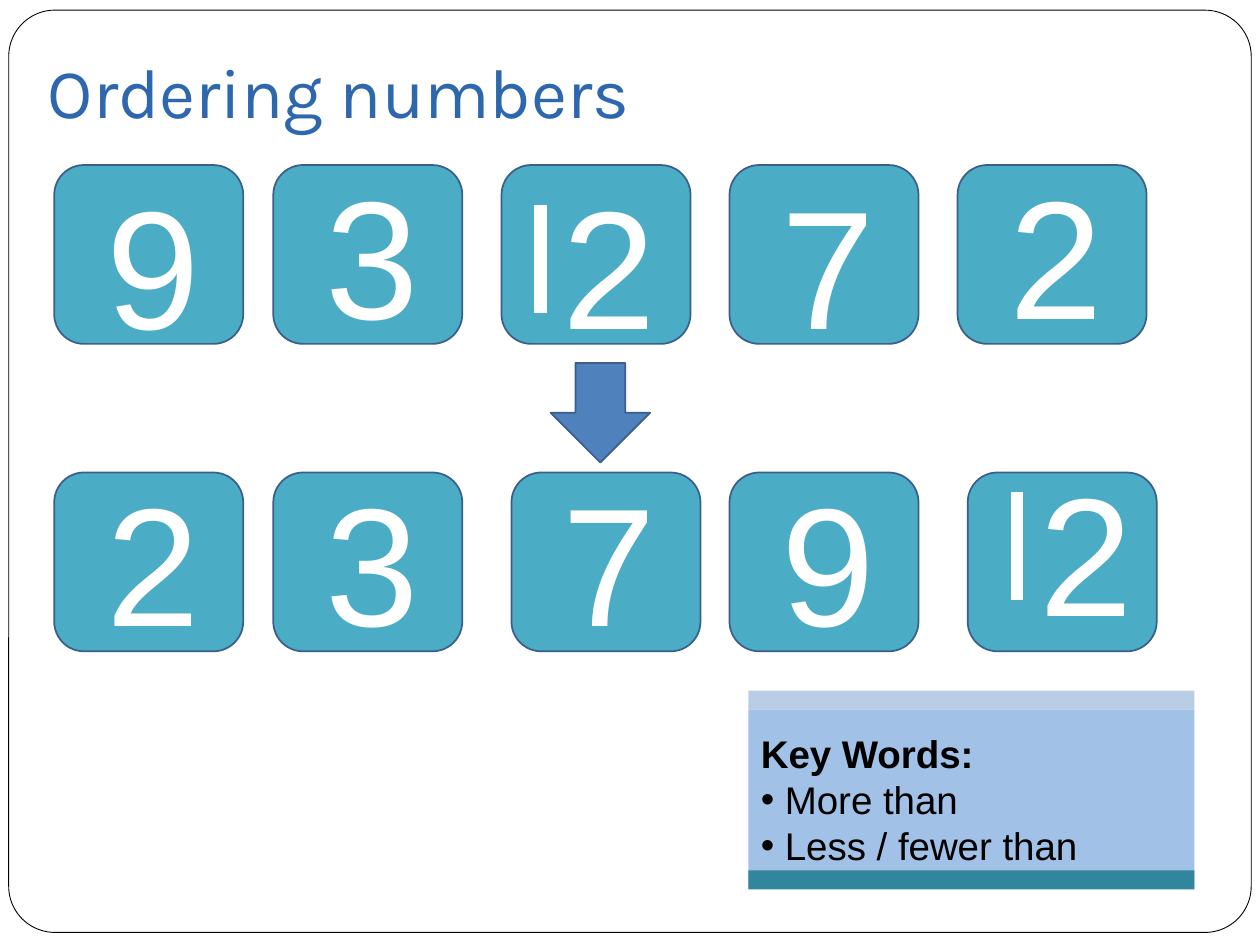
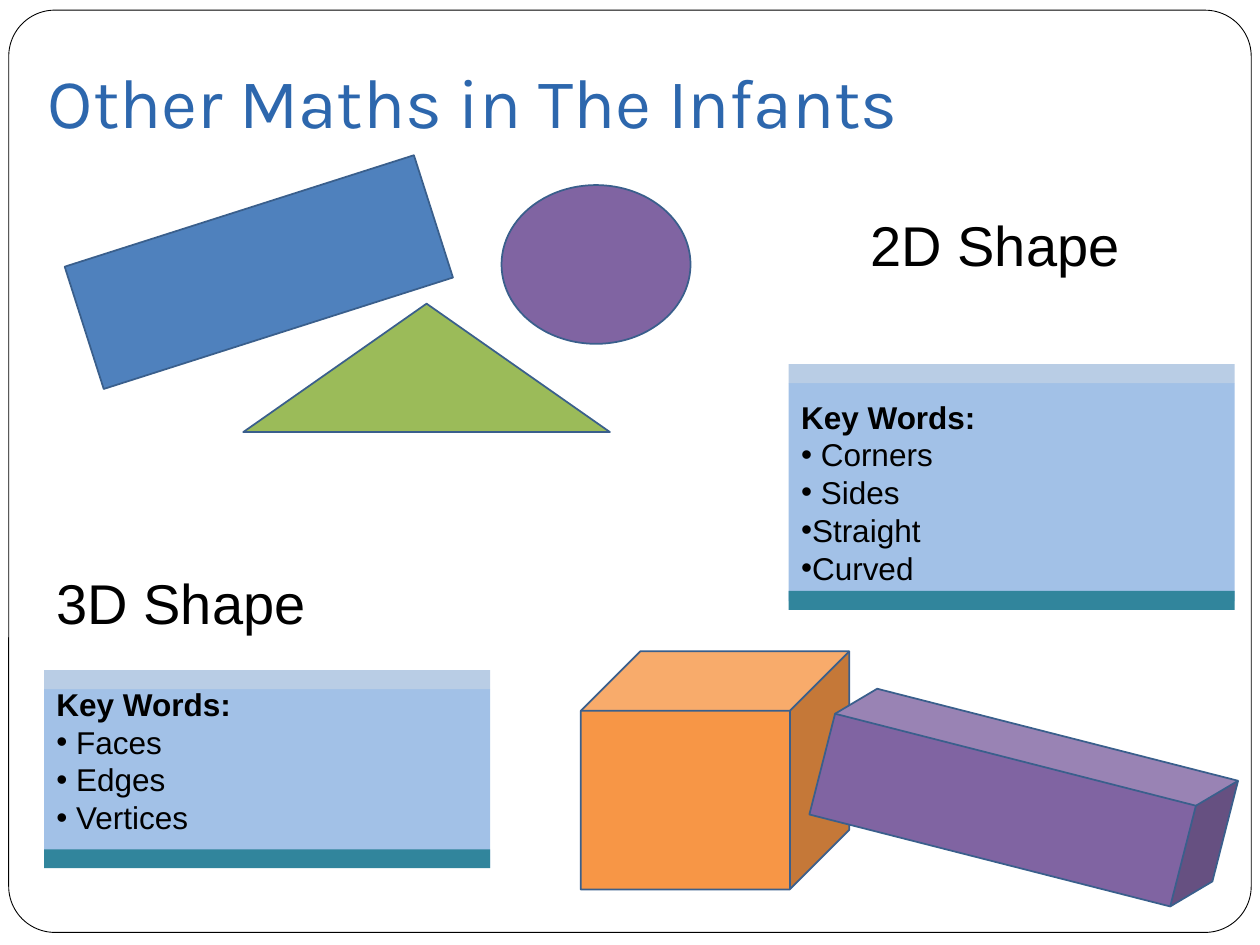
"""Build two infant maths slides: ordering numbers, and 2D and 3D shapes."""
from lxml import etree
from pptx import Presentation
from pptx.dml.color import RGBColor
from pptx.enum.shapes import MSO_CONNECTOR, MSO_SHAPE
from pptx.enum.text import MSO_ANCHOR, MSO_AUTO_SIZE, PP_ALIGN
from pptx.oxml.ns import qn
from pptx.util import Pt

ROUND, RECT, ARROW = MSO_SHAPE.ROUNDED_RECTANGLE, MSO_SHAPE.RECTANGLE, MSO_SHAPE.DOWN_ARROW
TRIANGLE, OVAL, CUBE = MSO_SHAPE.ISOSCELES_TRIANGLE, MSO_SHAPE.OVAL, MSO_SHAPE.CUBE
LEFT, CENTER = PP_ALIGN.LEFT, PP_ALIGN.CENTER
MIDDLE, BOTTOM = MSO_ANCHOR.MIDDLE, MSO_ANCHOR.BOTTOM
NO_FIT, GROW = MSO_AUTO_SIZE.NONE, MSO_AUTO_SIZE.SHAPE_TO_FIT_TEXT

THEME = {
    "title_font": "Karla", "body_font": "Arial",
    "title_size": 40, "label_size": 32, "digit_size": 96,
    "title": "2D67AD", "text": "000000", "white": "FFFFFF", "outline": "3A5F8C",
    "blue": "4F81BD", "green": "9BBB59", "purple": "8064A2", "orange": "F79646",
    "card": "4BACC6", "panel": "A2C1E7", "light_band": "B9CDE5", "dark_band": "31859C",
}


def draw(s, kind, box, fill, line="outline", width=1, rot=0):
    sp = s.shapes.add_shape(kind, *map(Pt, box))
    sp.shadow.inherit = False
    sp.rotation = rot
    sp.fill.solid()
    sp.fill.fore_color.rgb = RGBColor.from_string(THEME[fill])
    if line:
        sp.line.color.rgb = RGBColor.from_string(THEME[line])
        sp.line.width = Pt(width)
    else:
        sp.line.fill.background()
    return sp


def write(sp, lines, size, color="text", font="body_font", align=LEFT, **frame):
    tf = sp.text_frame
    for key, value in frame.items():
        setattr(tf, key, value)
    for i, line in enumerate(lines):
        p = tf.add_paragraph() if i else tf.paragraphs[0]
        p.alignment = align
        r = p.add_run()
        r.text = line
        r.font.name = THEME[font]
        r.font.size = Pt(size)
        r.font.color.rgb = RGBColor.from_string(THEME[color])
    return tf


prs = Presentation()
prs.slide_width, prs.slide_height = Pt(720), Pt(540)
numbers, shapes = [prs.slides.add_slide(prs.slide_layouts[5]) for _ in range(2)]

frame = draw(numbers, ROUND, (5, 5.8, 710, 527), "white", "text", 0.5)
frame.adjustments[0] = 0.05
frame.element.xpath(".//p:cNvPr")[0].set("id", "100")
prs.slide_master.shapes.element.insert(2, frame.element)

title_format = {
    "auto_size": NO_FIT, "vertical_anchor": BOTTOM, "word_wrap": True,
    "margin_left": Pt(7.2), "margin_right": Pt(7.2),
    "margin_top": Pt(3.6), "margin_bottom": Pt(7.2),
}
for s, text, height in ((numbers, "Ordering numbers", 61.2),
                        (shapes, "Other Maths in The Infants", 67)):
    sp = s.shapes.title
    sp.left, sp.top, sp.width, sp.height = map(Pt, (20.2, 21.6, 663.8, height))
    write(sp, [text], THEME["title_size"], "title", "title_font", **title_format)

card_rows = [
    (94.3, [("9", 31, 54, 88.6), ("3", 156.2, 178.6, 82.8), ("12", 286.6, 314.6, 88.6),
            ("7", 416.9, 439.2, 88.6), ("2", 547.2, 569.5, 82.8)]),
    (270, [("2", 31, 54, 258.5), ("3", 156.2, 178.6, 258.5), ("7", 292.3, 314.6, 258.5),
           ("9", 416.9, 439.2, 258.5), ("12", 553, 586.8, 252.7)]),
]
draw(numbers, ARROW, (314.6, 207.4, 56.9, 56.9), "blue")
for card_top, cards in card_rows:
    for number, card_left, left, top in cards:
        draw(numbers, ROUND, (card_left, card_top, 108, 102.2), "card")
        sp = numbers.shapes.add_textbox(*map(Pt, (left, top, 67.7, 123.8)))
        write(sp, [number[-1]], THEME["digit_size"], "white", align=CENTER,
              word_wrap=False, auto_size=GROW)
        if len(number) == 2:
            x, y = left - 5.7, top + 28.4
            bar = numbers.shapes.add_connector(
                MSO_CONNECTOR.STRAIGHT, Pt(x), Pt(y), Pt(x), Pt(y + 62))
            bar.line.color.rgb = RGBColor.from_string(THEME["white"])
            bar.line.width = Pt(7.25)
            etree.SubElement(bar.element.spPr, qn("a:effectLst"))

for kind, box, fill, rot in (
    (RECT, (43.2, 118.8, 209.5, 73.4), "blue", 342.3),
    (TRIANGLE, (139, 173.5, 209.5, 73.4), "green", 0),
    (OVAL, (286.6, 105.8, 108, 90.7), "purple", 0),
    (CUBE, (331.9, 372.2, 153.4, 136.1), "orange", 0),
    (CUBE, (468.7, 416.2, 232.6, 79.2), "purple", 14.3),
):
    draw(shapes, kind, box, fill, rot=rot)

for label, left, top in (("2D Shape", 490.3, 116.6), ("3D Shape", 25.2, 321.1)):
    sp = shapes.shapes.add_textbox(*map(Pt, (left, top, 181.4, 46)))
    write(sp, [label], THEME["label_size"], word_wrap=True, auto_size=GROW)

panel_width, band = 254.9, 10.8
for s, left, top, height, dark_top, size, bottom, words in (
    (numbers, 427.7, 405.4, 102.2, 497.4, 22, 3.6, [" More than", " Less / fewer than"]),
    (shapes, 450.7, 218.9, 124.6, 337.7, 18, 3.6,
     [" Corners", " Sides", "Straight", "Curved"]),
    (shapes, 25.2, 393.8, 102.2, 485.3, 18, 24.3, [" Faces", " Edges", " Vertices"]),
):
    sp = draw(s, RECT, (left, top, panel_width, height), "panel", None)
    tf = write(sp, ["Key Words:"] + words, size, vertical_anchor=MIDDLE,
               word_wrap=True, margin_bottom=Pt(bottom))
    tf.paragraphs[0].runs[0].font.bold = True
    for p in tf.paragraphs[1:]:
        pPr = p._p.get_or_add_pPr()
        etree.SubElement(pPr, qn("a:buFont"), typeface=THEME["body_font"])
        etree.SubElement(pPr, qn("a:buChar"), char="•")
    draw(s, RECT, (left, top - band, panel_width, band), "light_band", None)
    draw(s, RECT, (left, dark_top, panel_width, band), "dark_band", None)

prs.save("out.pptx")
